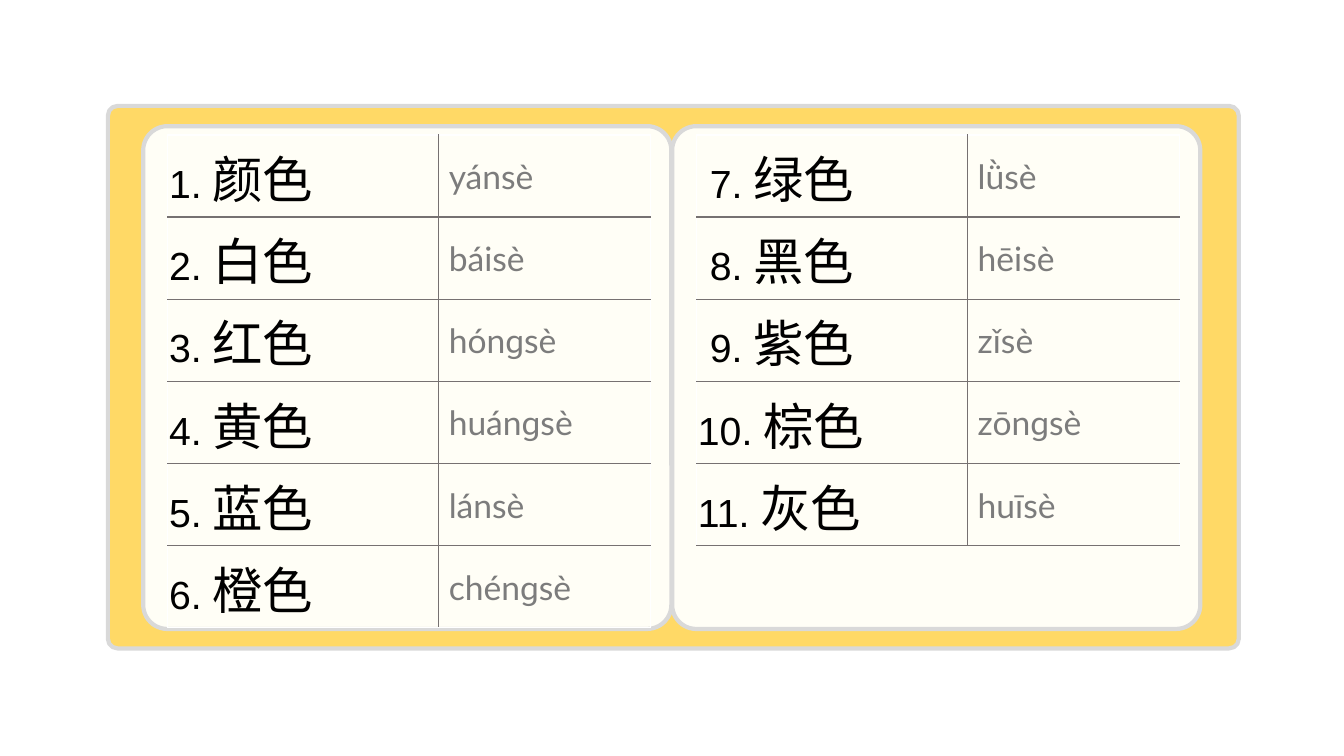
from lxml import etree
from pptx import Presentation
from pptx.dml.color import RGBColor
from pptx.enum.shapes import MSO_SHAPE
from pptx.enum.text import MSO_ANCHOR
from pptx.oxml.ns import qn
from pptx.util import Cm, Pt

COLORS = {
    "frame": "FFD966", "card": "FFFEF6", "edge": "D9D9D9", "rule": "767171",
    "blank": "FFFFFF", "word": "000000", "pinyin": "7C7C7C",
}
WORDS = [
    ("颜色", "yánsè"), ("白色", "báisè"), ("红色", "hónɡsè"),
    ("黄色", "huánɡsè"), ("蓝色", "lánsè"), ("橙色", "chénɡsè"),
    ("绿色", "lǜsè"), ("黑色", "hēisè"), ("紫色", "zǐsè"),
    ("棕色", "zōnɡsè"), ("灰色", "huīsè"),
]
ROWS_PER_CARD = 6
COLUMN_WIDTHS = (6.83, 5.33)
ROW_HEIGHT = 2.07
CELL_MARGIN = 0.03
PINYIN_INDENT = 0.22
DIGIT_INDENT = 0.3


def rgb(name):
    return RGBColor.from_string(COLORS[name])


def add_panel(slide, box, fill, corner):
    sp = slide.shapes.add_shape(MSO_SHAPE.ROUNDED_RECTANGLE, *map(Cm, box))
    sp.adjustments[0] = corner
    sp.shadow.inherit = False
    sp.fill.solid()
    sp.fill.fore_color.rgb = rgb(fill)
    sp.line.color.rgb = rgb("edge")
    sp.line.width = Pt(3)


def add_run(p, text, size, font, color):
    r = p.add_run()
    r.text = text
    r.font.size = Pt(size)
    r.font.name = font
    r.font.color.rgb = rgb(color)
    # East Asian typeface follows the Latin one
    ea = etree.Element(qn("a:ea"), typeface=font)
    r.font._element.find(qn("a:latin")).addnext(ea)


def set_borders(cell, **colors):
    tc_pr = cell._tc.get_or_add_tcPr()
    for side in "LRTB":
        ln = etree.SubElement(tc_pr, qn("a:ln" + side), w=str(Pt(1)))
        fill = etree.SubElement(ln, qn("a:solidFill"))
        etree.SubElement(fill, qn("a:srgbClr"), val=COLORS[colors[side]])


def format_cell(cell, indent):
    cell.fill.background()
    cell.vertical_anchor = MSO_ANCHOR.MIDDLE
    cell.margin_left = Cm(CELL_MARGIN + indent)
    cell.margin_right = cell.margin_top = Cm(CELL_MARGIN)
    cell.margin_bottom = 0


def add_word_table(slide, box, words, first):
    left, top, width, _ = box
    count = len(words)
    table = slide.shapes.add_table(
        count, 2, Cm(left), Cm(top), Cm(width), Cm(ROW_HEIGHT * count)).table
    table.first_row = table.horz_banding = False
    for column, column_width in zip(table.columns, COLUMN_WIDTHS):
        column.width = Cm(column_width)

    digits = len(str(first + count - 1))
    for i, (word, pinyin) in enumerate(words):
        table.rows[i].height = Cm(ROW_HEIGHT)
        number = str(first + i)
        word_cell, pinyin_cell = table.cell(i, 0), table.cell(i, 1)
        edges = {"T": "rule" if i else "blank",
                 "B": "blank" if i == ROWS_PER_CARD - 1 else "rule"}
        set_borders(word_cell, L="blank", R="rule", **edges)
        set_borders(pinyin_cell, L="rule", R="blank", **edges)
        format_cell(word_cell, DIGIT_INDENT * (digits - len(number)))
        format_cell(pinyin_cell, PINYIN_INDENT)

        p = word_cell.text_frame.paragraphs[0]
        add_run(p, f"{number}. ", 28, "Arial", "word")
        add_run(p, word, 36, "Noto Sans CJK SC", "word")
        p = pinyin_cell.text_frame.paragraphs[0]
        add_run(p, pinyin, 24, "Lato", "pinyin")


def add_card(slide, box, words, first):
    left, top, width, height = box
    add_panel(slide, box, "card", 0.048)
    inner = (left + 0.62, top + 0.22, sum(COLUMN_WIDTHS), height)
    add_word_table(slide, inner, words, first)


def add_vocabulary(slide, box):
    left, top, _, _ = box
    add_panel(slide, box, "frame", 0.018)
    for i, start in enumerate(range(0, len(WORDS), ROWS_PER_CARD)):
        card = (left + 0.89 + 13.33 * i, top + 0.51, 13.31, 12.67)
        add_card(slide, card, WORDS[start:start + ROWS_PER_CARD], start + 1)


def main():
    prs = Presentation()
    prs.slide_width, prs.slide_height = Cm(33.87), Cm(19.05)
    slide = prs.slides.add_slide(prs.slide_layouts[6])  # blank layout
    add_vocabulary(slide, (2.72, 2.67, 28.5, 13.67))
    prs.save("out.pptx")


if __name__ == "__main__":
    main()
